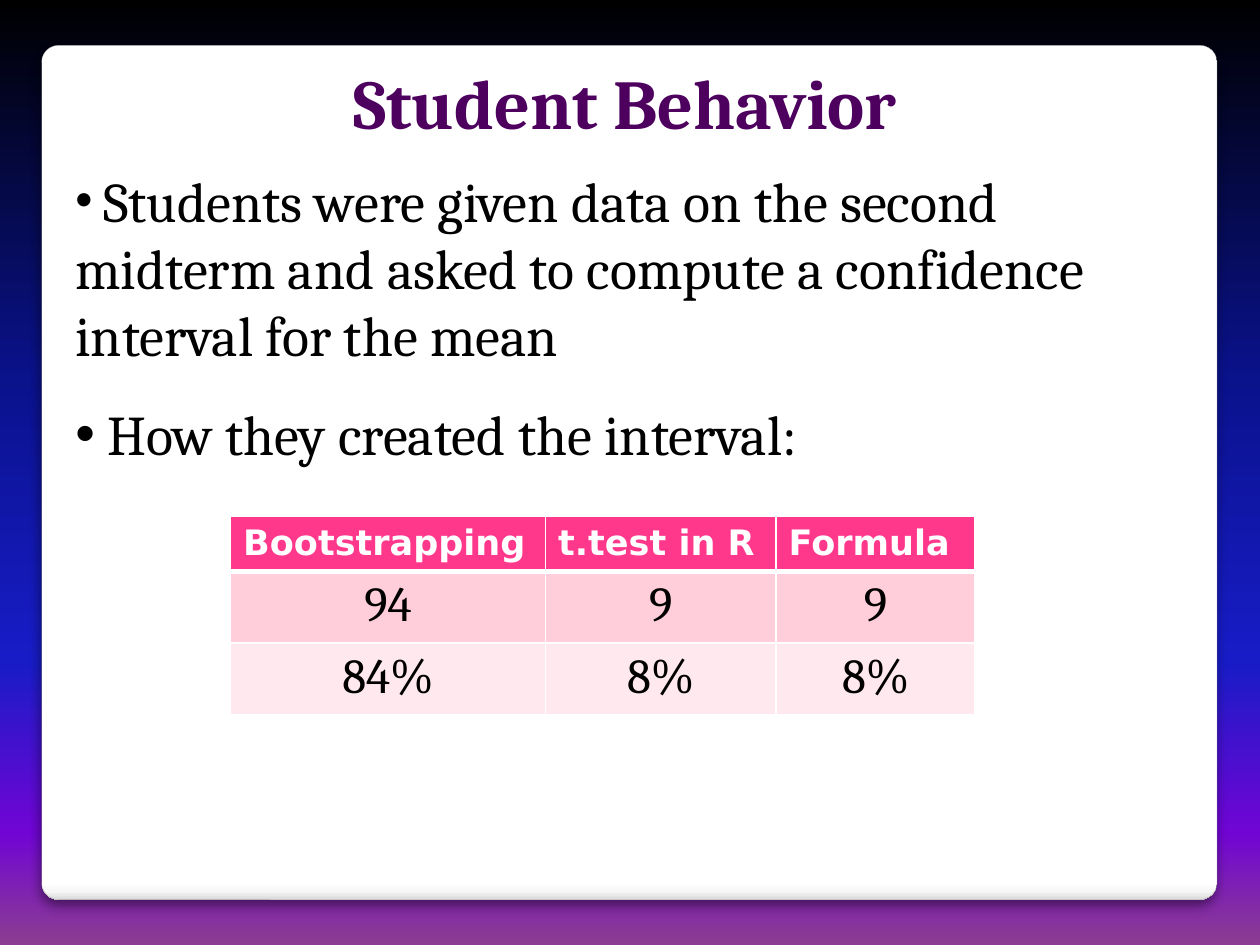
"""Build the Student Behavior slide with its bullets and interval table."""
from lxml import etree
from pptx import Presentation
from pptx.dml.color import RGBColor
from pptx.enum.shapes import MSO_SHAPE
from pptx.enum.text import MSO_ANCHOR, MSO_AUTO_SIZE, PP_ALIGN
from pptx.oxml import parse_xml
from pptx.oxml.ns import nsdecls, qn
from pptx.util import Inches, Pt

ROUND = MSO_SHAPE.ROUNDED_RECTANGLE
TOP = MSO_ANCHOR.TOP
FIXED = MSO_AUTO_SIZE.NONE
LEFT, CENTER = PP_ALIGN.LEFT, PP_ALIGN.CENTER
SERIF, SANS = "Cambria", "DejaVu Sans"
COLORS = {
    "title": "4E005F", "text": "000000", "white": "FFFFFF", "edge": "A4A4A4",
    "head": "FF388C", "odd": "FFCEDA", "even": "FFE8EE",
}
SKY = [(0, "000000"), (40, "0A128C"), (70, "181CC7"), (88, "7005D4"), (100, "8C3D91")]
PAPER = [(0, "FFFFFF"), (98, "FFFFFF"), (99, "F7F7F7"), (100, "DADADA")]


def shade(fill, root, stops):
    fill.gradient()
    fill.gradient_angle = 270
    group = root.find(".//" + qn("a:gsLst"))
    for old in list(group):
        group.remove(old)
    for pos, color in stops:
        stop = etree.SubElement(group, qn("a:gs"), pos=str(pos * 1000))
        etree.SubElement(stop, qn("a:srgbClr"), val=color)


def style(font, name, size, color, bold=False):
    font.name, font.size, font.bold = name, Pt(size), bold
    font.color.rgb = RGBColor.from_string(COLORS[color])


deck = Presentation()
deck.slide_width, deck.slide_height = Inches(10), Inches(7.5)
slide = deck.slides.add_slide(deck.slide_layouts[5])
shade(slide.background.fill, slide.element, SKY)

panel = slide.shapes.add_shape(ROUND, Inches(0.33), Inches(0.36), Inches(9.33), Inches(6.78))
panel.adjustments[0] = 0.02
shade(panel.fill, panel.element, PAPER)
panel.line.color.rgb = RGBColor.from_string(COLORS["edge"])
panel.line.width = Pt(0.16)
panel.shadow.inherit = False
panel.element.spPr.find(qn("a:effectLst")).append(parse_xml(
    f'<a:outerShdw {nsdecls("a")} blurRad="{Pt(6)}" dist="{Pt(4)}" dir="5400000" '
    'algn="t" rotWithShape="0"><a:srgbClr val="000000"><a:alpha val="44000"/>'
    '</a:srgbClr></a:outerShdw>'))
slide.shapes.element.insert(2, panel.element)

title = slide.shapes.title
title.left, title.top = Inches(0.5), Inches(0.42)
title.width, title.height = Inches(8.92), Inches(1.33)
frame = title.text_frame
frame.text = "Student Behavior"
frame.vertical_anchor, frame.auto_size = TOP, FIXED
frame.paragraphs[0].alignment = CENTER
style(frame.paragraphs[0].font, SERIF, 40, "title", True)

body = slide.shapes.add_textbox(Inches(0.5), Inches(1.27), Inches(8.92), Inches(6.23))
frame = body.text_frame
frame.word_wrap = True
points = [
    [(" ", 28), ("Students were given data on the second midterm and asked "
                 "to compute a confidence interval for the mean", 32)],
    [(" How they created the interval:", 32)],
]
for i, runs in enumerate(points):
    para = frame.add_paragraph() if i else frame.paragraphs[0]
    para.space_after = Pt(18)
    props = para._p.get_or_add_pPr()
    etree.SubElement(props, qn("a:buFont"), typeface="Arial")
    etree.SubElement(props, qn("a:buChar"), char="•")
    for text, size in runs:
        run = para.add_run()
        run.text = text
        style(run.font, SERIF, size, "text")

rows = [
    ("head", 0.43, ["Bootstrapping", "t.test in R", "Formula"]),
    ("odd", 0.57, ["94", "9", "9"]),
    ("even", 0.57, ["84%", "8%", "8%"]),
]
table = slide.shapes.add_table(
    3, 3, Inches(1.83), Inches(4.1), Inches(5.91), Inches(1.57)).table
for col, width in zip(table.columns, [2.5, 1.83, 1.58]):
    col.width = Inches(width)
for r, (kind, height, texts) in enumerate(rows):
    table.rows[r].height = Inches(height)
    head = kind == "head"
    for c, text in enumerate(texts):
        cell = table.cell(r, c)
        cell.text = text
        cell.fill.solid()
        cell.fill.fore_color.rgb = RGBColor.from_string(COLORS[kind])
        para = cell.text_frame.paragraphs[0]
        para.alignment = LEFT if head else CENTER
        if head:
            style(para.font, SANS, 20, "white", True)
        else:
            style(para.font, SERIF, 28, "text")
        props = cell._tc.get_or_add_tcPr()
        for i, side in enumerate("LRTB"):
            thick = (head and side == "B") or (r == 1 and side == "T")
            props.insert(i, parse_xml(
                f'<a:ln{side} {nsdecls("a")} w="{Pt(3 if thick else 1)}"><a:solidFill>'
                f'<a:srgbClr val="{COLORS["white"]}"/></a:solidFill></a:ln{side}>'))

deck.save("out.pptx")
